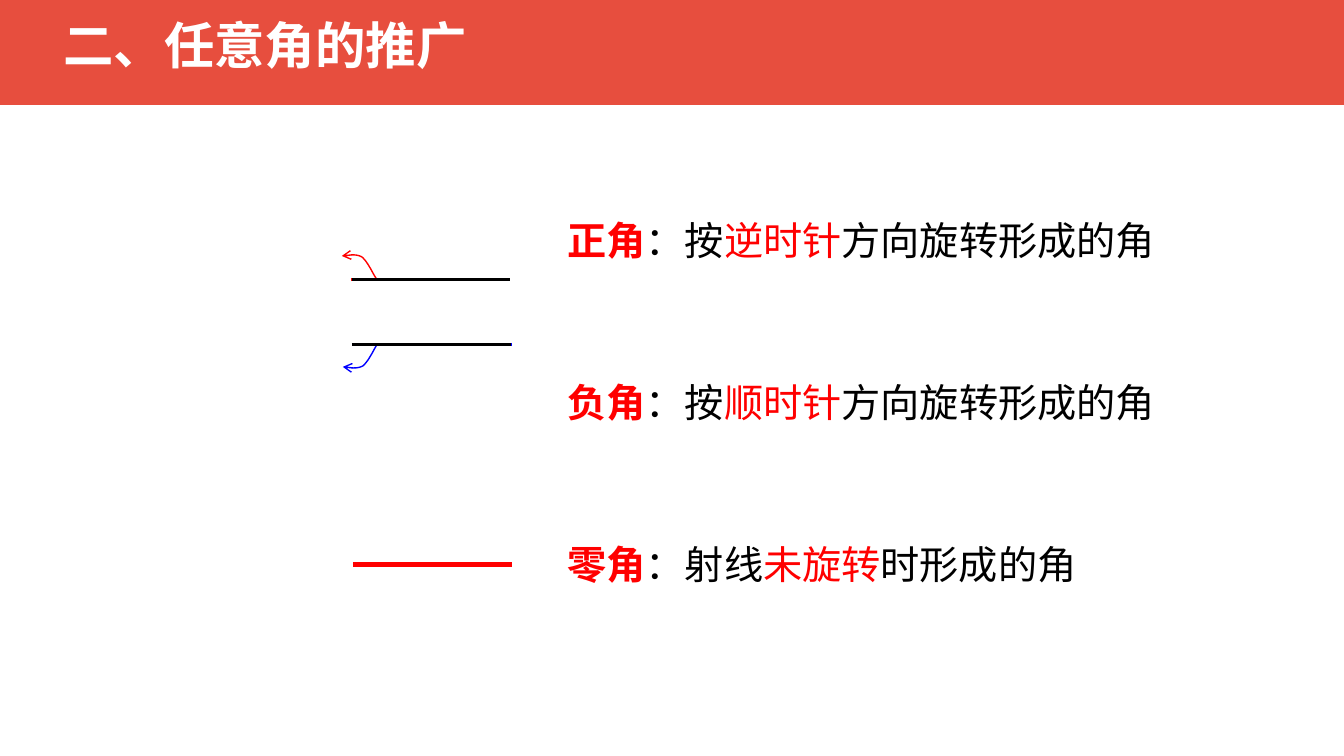
from dataclasses import dataclass

from lxml.etree import SubElement
from pptx import Presentation
from pptx.dml.color import RGBColor as Color
from pptx.enum.shapes import MSO_CONNECTOR as Connector
from pptx.enum.shapes import MSO_SHAPE as Preset
from pptx.enum.text import MSO_ANCHOR as Anchor
from pptx.oxml.ns import qn
from pptx.util import Inches, Pt


@dataclass(frozen=True)
class Theme:
    font: str = "Noto Sans CJK SC"
    title_size: int = 36
    body_size: int = 28
    banner: str = "E74E3E"
    white: str = "FFFFFF"
    black: str = "000000"
    red: str = "FF0000"
    blue: str = "0000FF"


THEME = Theme()
TITLE = "二、任意角的推广"
DEFINITIONS = [
    ("正角", "：按", "逆时针", "方向旋转形成的角"),
    ("负角", "：按", "顺时针", "方向旋转形成的角"),
    ("零角", "：射线", "未旋转", "时形成的角"),
]
RAYS = [
    (3.48, 5.06, 2.77, THEME.red, 2),
    (3.49, 5.06, 2.77, THEME.black, 2),
    (3.49, 5.08, 3.42, THEME.blue, 2),
    (3.49, 5.07, 3.42, THEME.black, 2),
    (3.5, 5.08, 5.6, THEME.black, 2.25),
    (3.5, 5.08, 5.6, THEME.red, 3),
]
TURNS = [(3.73, 2.76, -1, THEME.red), (3.74, 3.42, 1, THEME.blue)]
ARC = [
    ((0, 0), (-0.03, 0.04), (-0.08, 0.16), (-0.14, 0.21)),
    ((-0.14, 0.21), (-0.21, 0.25), (-0.3, 0.22), (-0.34, 0.22)),
]
ARC_STEPS = 12
WIDTH, HEIGHT = 13.33, 7.5
BANNER_HEIGHT = 1.04
TEXT_LEFT, TEXT_TOP, ROW_PITCH = 5.53, 2.09, 1.61
TEXT_WIDTH, TEXT_HEIGHT = 6.52, 0.57


def add_text(slide, runs, left, top, width, height, size, spacing=None):
    box = slide.shapes.add_textbox(*map(Inches, (left, top, width, height)))
    frame = box.text_frame
    frame.word_wrap = True
    frame.vertical_anchor = Anchor.MIDDLE
    paragraph = frame.paragraphs[0]
    paragraph.line_spacing = spacing
    for text, color, bold in runs:
        run = paragraph.add_run()
        run.text = text
        font = run.font
        font.name, font.size, font.bold = THEME.font, Pt(size), bold
        font.color.rgb = Color.from_string(color)
        SubElement(run._r.get_or_add_rPr(), qn("a:ea"), typeface=THEME.font)


def style_line(line, color, weight):
    line.color.rgb = Color.from_string(color)
    line.width = Pt(weight)


def add_ray(slide, start, end, level, color, weight):
    ray = slide.shapes.add_connector(
        Connector.STRAIGHT, Inches(start), Inches(level), Inches(end), Inches(level))
    style_line(ray.line, color, weight)
    SubElement(ray._element.spPr, qn("a:effectLst"))


def curve_point(controls, t):
    weights = ((1 - t) ** 3, 3 * t * (1 - t) ** 2, 3 * t * t * (1 - t), t ** 3)
    return [sum(w * point[axis] for w, point in zip(weights, controls)) for axis in (0, 1)]


def add_turn(slide, x, y, direction, color):
    offsets = [curve_point(controls, step / ARC_STEPS)
               for controls in ARC for step in range(1, ARC_STEPS + 1)]
    builder = slide.shapes.build_freeform(Inches(x), Inches(y))
    builder.add_line_segments(
        [(Inches(x + dx), Inches(y + direction * dy)) for dx, dy in offsets], close=False)
    arc = builder.convert_to_shape()
    arc.shadow.inherit = False
    arc.fill.background()
    style_line(arc.line, color, 1)
    SubElement(arc.line._get_or_add_ln(), qn("a:tailEnd"), type="arrow")


def main():
    presentation = Presentation()
    presentation.slide_width, presentation.slide_height = Inches(WIDTH), Inches(HEIGHT)
    slide = presentation.slides.add_slide(presentation.slide_layouts[6])

    banner = slide.shapes.add_shape(
        Preset.RECTANGLE, 0, 0, Inches(WIDTH), Inches(BANNER_HEIGHT))
    banner.shadow.inherit = False
    banner.fill.solid()
    banner.fill.fore_color.rgb = Color.from_string(THEME.banner)
    banner.line.fill.background()

    for row, (term, lead, key, rest) in enumerate(DEFINITIONS):
        runs = [(term, THEME.red, True), (lead, THEME.black, False),
                (key, THEME.red, False), (rest, THEME.black, False)]
        add_text(slide, runs, TEXT_LEFT, TEXT_TOP + row * ROW_PITCH,
                 TEXT_WIDTH, TEXT_HEIGHT, THEME.body_size)
    for turn in TURNS:
        add_turn(slide, *turn)
    for ray in RAYS:
        add_ray(slide, *ray)
    add_text(slide, [(TITLE, THEME.white, True)], 0.53, 0, 4.54, 0.95,
             THEME.title_size, spacing=0.9)
    presentation.save("out.pptx")


if __name__ == "__main__":
    main()
